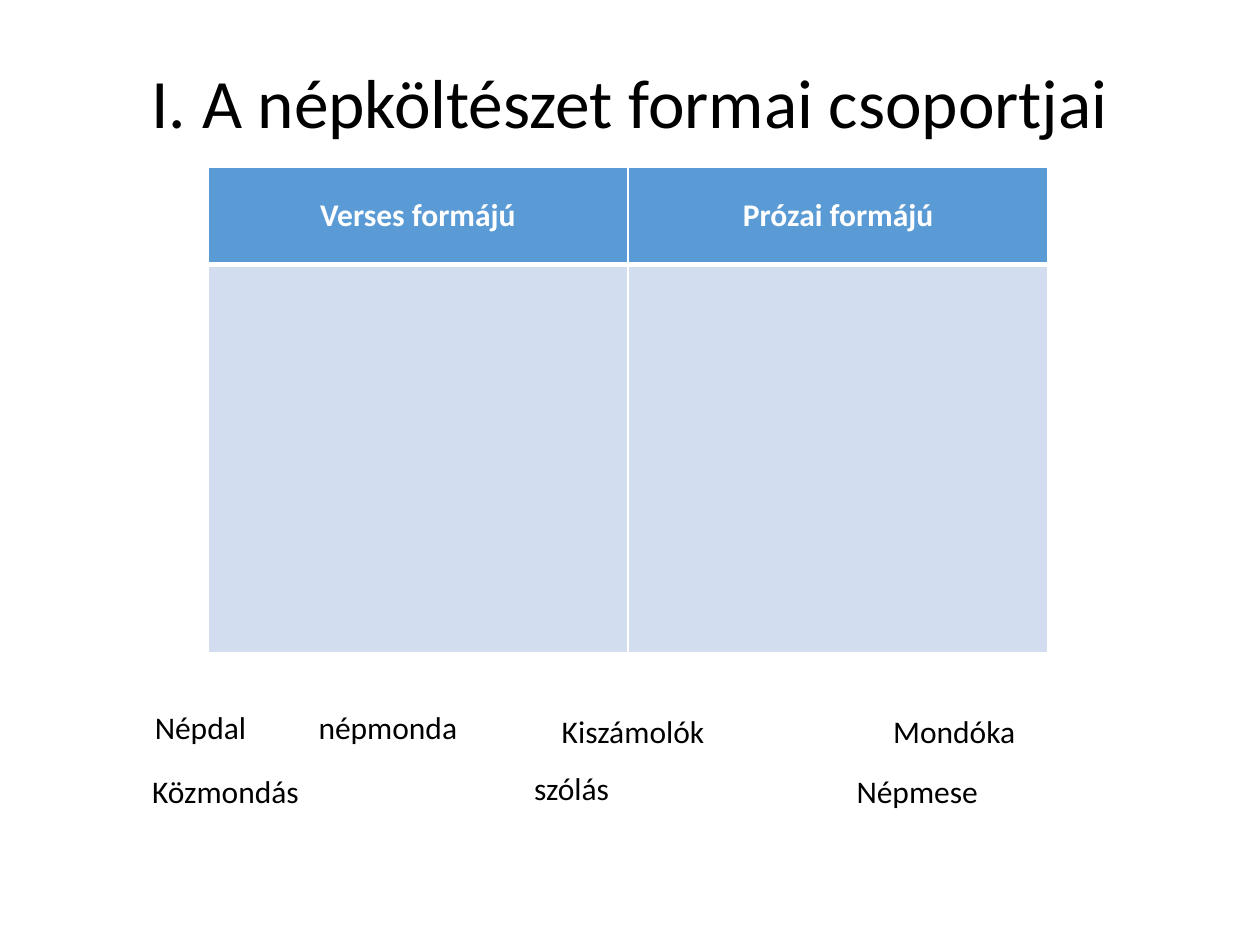
from lxml.etree import SubElement
from pptx import Presentation
from pptx.dml.color import RGBColor
from pptx.enum.text import MSO_ANCHOR, MSO_AUTO_SIZE, PP_ALIGN
from pptx.oxml.ns import qn
from pptx.util import Inches, Pt

COLORS = {
    "text": "000000",
    "header_text": "FFFFFF",
    "header_fill": "5B9BD5",
    "body_fill": "D2DEEF",
    "border": "FFFFFF",
}
HEADERS = ["Verses formájú", "Prózai formájú"]
# Word, left, top, width
WORDS = [
    ("Népdal", 1.13, 5.57, 1.09),
    ("Mondóka", 6.99, 5.6, 1.35),
    ("Népmese", 6.7, 6.08, 1.36),
    ("népmonda", 2.43, 5.57, 1.5),
    ("Közmondás", 1.11, 6.08, 1.63),
    ("szólás", 4.14, 6.05, 1.02),
    ("Kiszámolók", 4.36, 5.6, 1.61),
]


def write_text(text_frame, text, size=18, color="text", bold=False,
               align=PP_ALIGN.LEFT, line_spacing=None):
    paragraph = text_frame.paragraphs[0]
    paragraph.alignment = align
    paragraph.line_spacing = line_spacing
    run = paragraph.add_run()
    run.text = text
    run.font.name = "Calibri"
    run.font.size = Pt(size)
    run.font.bold = bold
    run.font.color.rgb = RGBColor.from_string(COLORS[color])


def add_title(slide, text):
    shape = slide.shapes.add_textbox(Inches(0.69), Inches(0.4), Inches(8.62), Inches(0.89))
    shape.text_frame.word_wrap = True
    shape.text_frame.vertical_anchor = MSO_ANCHOR.MIDDLE
    write_text(shape.text_frame, text, size=39.6, align=PP_ALIGN.CENTER, line_spacing=0.9)


def add_word(slide, word, left, top, width):
    shape = slide.shapes.add_textbox(Inches(left), Inches(top), Inches(width), Inches(0.45))
    shape.text_frame.word_wrap = False
    shape.text_frame.auto_size = MSO_AUTO_SIZE.SHAPE_TO_FIT_TEXT
    write_text(shape.text_frame, word)


def format_cell(cell, fill, top=1, bottom=1):
    properties = cell._tc.get_or_add_tcPr()
    for side, width in (("L", 1), ("R", 1), ("T", top), ("B", bottom)):
        line = SubElement(properties, qn(f"a:ln{side}"), w=str(Pt(width)))
        solid = SubElement(line, qn("a:solidFill"))
        SubElement(solid, qn("a:srgbClr"), val=COLORS["border"])
    cell.fill.solid()
    cell.fill.fore_color.rgb = RGBColor.from_string(COLORS[fill])


def add_group_table(slide):
    table = slide.shapes.add_table(
        2, len(HEADERS), Inches(1.65), Inches(1.33), Inches(6.67), Inches(3.85)
    ).table
    table.rows[0].height = Inches(0.77)
    table.rows[1].height = Inches(3.08)
    for column, header in enumerate(HEADERS):
        cell = table.cell(0, column)
        cell.vertical_anchor = MSO_ANCHOR.MIDDLE
        write_text(cell.text_frame, header, color="header_text", bold=True,
                   align=PP_ALIGN.CENTER)
        format_cell(cell, "header_fill", bottom=3)
        format_cell(table.cell(1, column), "body_fill", top=3)


def main():
    presentation = Presentation()
    presentation.slide_width = Inches(10)
    presentation.slide_height = Inches(7.5)
    slide = presentation.slides.add_slide(presentation.slide_layouts[6])

    # Title and the two groups
    add_title(slide, "I. A népköltészet formai csoportjai")
    add_group_table(slide)

    # Words to sort into the groups
    for word in WORDS:
        add_word(slide, *word)

    presentation.save("out.pptx")


if __name__ == "__main__":
    main()
